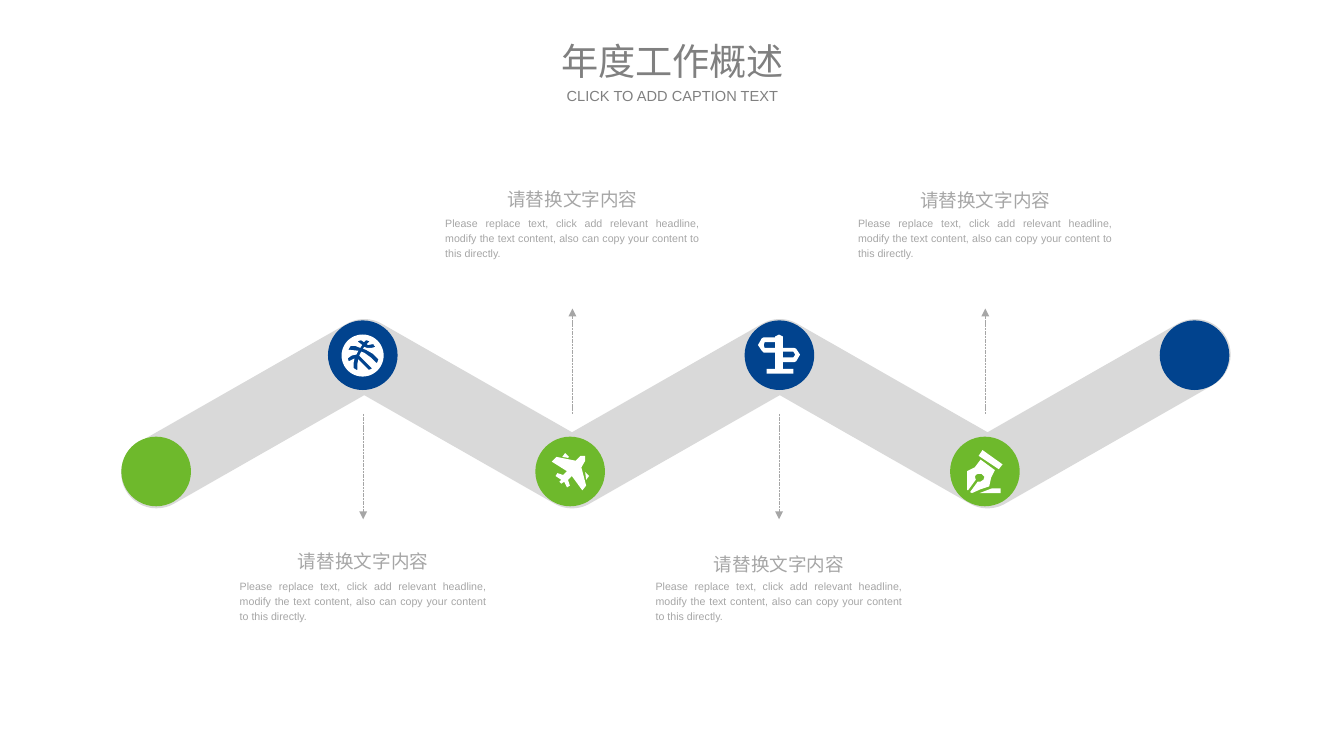
import math
from dataclasses import dataclass

from pptx import Presentation, util as u
from pptx.dml.color import RGBColor
from pptx.enum import dml, shapes, text
from pptx.oxml import ns
from lxml import etree

Point = tuple[float, float]
Contour = list[Point]


@dataclass(frozen=True)
class Theme:
    font: str = "Arial"
    title: str = "808080"
    caption: str = "A6A6A6"
    band: str = "D9D9D9"
    green: str = "6EB92C"
    blue: str = "01438E"
    icon: str = "FFFFFF"
    title_size: float = 28
    subtitle_size: float = 11
    heading_size: float = 14
    body_size: float = 8


@dataclass(frozen=True)
class Icon:
    left: float
    top: float
    contours: list[Contour]


@dataclass(frozen=True)
class Stop:
    x: float
    high: bool
    icon: Icon | None = None


@dataclass(frozen=True)
class Callout:
    x: float
    heading_top: float
    above: bool


THEME = Theme()
HIGH_Y, LOW_Y = 9.44, 12.53
DISC = 1.85
BAND_X, BAND_PITCH, BAND_RADIUS = 4.16, 5.52, 0.94
BAND_HIGH, BAND_LOW = 9.42, 12.57
ARROW_Y, ARROW_LENGTH = 11, 2.8
ICON_UNIT = u.Cm(2.54) / 100
HEADING = "请替换文字内容"
BODY = ("Please replace text, click add relevant headline, modify the text content, "
        "also can copy your content to this directly.")


def arc(center: Point, radius: float, start: float, sweep: float, steps: int) -> Contour:
    return [(center[0] + radius * math.cos(start + sweep * i / steps),
             center[1] + radius * math.sin(start + sweep * i / steps))
            for i in range(steps + 1)]


BALL = Icon(9.09, 8.89, [
    arc((21.5, 22), 22, 0, math.tau, 48),
    [(9, 12), (7, 15), (7, 16), (17, 17), (16, 19), (15, 21), (10, 22), (6, 25), (7, 28),
     (13, 25), (12, 30), (12, 35), (15, 37), (16, 37), (16, 31), (17, 26), (22, 31), (28, 37),
     (31, 36), (31, 35), (25, 29), (18, 22), (19, 20), (20, 18), (23, 19), (30, 24), (36, 30),
     (37, 29), (38, 26), (32, 20), (25, 16), (22, 15), (23, 13), (26, 14), (31, 14), (35, 13),
     (33, 11), (33, 10), (27, 11), (26, 10), (29, 7), (25, 6), (23, 8), (20, 6), (16, 7),
     (21, 11), (19, 14), (14, 12)]])
SIGNPOST = Icon(20.14, 8.89, [
    [(26, 14), (38, 14), (40, 15), (44, 21), (40, 28), (38, 29), (26, 29), (26, 36), (37, 36),
     (37, 41), (9, 41), (9, 36), (18, 36), (18, 19), (6, 19), (4, 17), (0, 11), (4, 4), (6, 3),
     (18, 3), (18, 2), (22, 0), (26, 2)],
    [(18, 8), (7, 8), (6, 11), (7, 14), (18, 14)],
    [(37, 18), (26, 18), (26, 24), (37, 24), (39, 21)]])
PLANE = Icon(14.66, 12.04, [
    [(35, 3), (35, 8), (31, 15), (36, 34), (32, 39), (21, 24), (17, 28), (19, 34), (16, 36),
     (13, 30), (10, 32), (8, 30), (10, 28), (4, 24), (6, 21), (12, 23), (16, 19), (0, 9),
     (5, 4), (25, 8), (30, 3)],
    [(39, 24), (35, 20), (36, 28)],
    [(14, 0), (11, 4), (17, 5), (18, 4)]])
PEN = Icon(25.7, 11.96, [
    [(0, 42), (0, 22), (8, 18), (14, 10), (29, 21), (25, 29), (23, 38), (14, 41), (5, 45),
     (3, 44), (11, 33), (14, 33), (17, 31), (18, 28), (15, 25), (11, 25), (9, 26), (8, 28),
     (9, 31), (1, 42)],
    [(13, 45), (35, 45), (35, 40), (26, 40)],
    [(33, 20), (37, 15), (16, 0), (12, 6)]])

STOPS = [Stop(4.15, False), Stop(9.64, True, BALL), Stop(15.15, False, PLANE),
         Stop(20.71, True, SIGNPOST), Stop(26.17, False, PEN), Stop(31.74, True)]
CALLOUTS = [Callout(9.65, 14.38, False), Callout(20.7, 14.45, False),
            Callout(15.21, 4.75, True), Callout(26.18, 4.78, True)]


def band_outline(nodes: Contour, radius: float) -> Contour:
    """Walk round the zigzag, rounding outer corners and mitring inner ones."""
    route = nodes + nodes[-2:0:-1]
    outline: Contour = []
    for i, node in enumerate(route):
        before, after = route[i - 1], route[(i + 1) % len(route)]
        heading = math.atan2(node[1] - before[1], node[0] - before[0])
        leaving = math.atan2(after[1] - node[1], after[0] - node[0])
        turn = (leaving - heading) % math.tau
        normal = heading - math.pi / 2
        if turn < math.pi + 0.01:
            outline += arc(node, radius, normal, turn, 24)
        else:
            half = (turn - math.tau) / 2
            outline += arc(node, radius / math.cos(half), normal + half, 0, 1)[:1]
    return outline


def paint(shape, color: str) -> None:
    shape.shadow.inherit = False
    shape.fill.solid()
    shape.fill.fore_color.rgb = RGBColor.from_string(color)
    shape.line.fill.background()


def draw_outline(slide, contours: list[Contour], unit: float, color: str,
                 left: float = 0, top: float = 0) -> None:
    scaled = [[(x * unit, y * unit) for x, y in contour] for contour in contours]
    builder = slide.shapes.build_freeform(*scaled[0][0])
    builder.add_line_segments(scaled[0][1:])
    for contour in scaled[1:]:
        builder.move_to(*contour[0])
        builder.add_line_segments(contour[1:])
    paint(builder.convert_to_shape(u.Cm(left), u.Cm(top)), color)


def draw_stop(slide, stop: Stop) -> None:
    y = HIGH_Y if stop.high else LOW_Y
    disc = slide.shapes.add_shape(shapes.MSO_SHAPE.OVAL, u.Cm(stop.x - DISC / 2),
                                  u.Cm(y - DISC / 2), u.Cm(DISC), u.Cm(DISC))
    paint(disc, THEME.blue if stop.high else THEME.green)
    if stop.icon:
        draw_outline(slide, stop.icon.contours, ICON_UNIT, THEME.icon,
                     stop.icon.left, stop.icon.top)


def write(shape, content: str, size: float, color: str, frame: dict, paragraph: dict) -> None:
    text_frame = shape.text_frame
    text_frame.text = content
    first = text_frame.paragraphs[0]
    font = first.runs[0].font
    formats = [(text_frame, frame), (first, paragraph),
               (font, {"name": THEME.font, "size": u.Pt(size)})]
    for target, values in formats:
        for name, value in values.items():
            setattr(target, name, value)
    font.color.rgb = RGBColor.from_string(color)


def add_text_box(slide, center: float, top: float, width: float, height: float):
    return slide.shapes.add_textbox(u.Cm(center - width / 2), u.Cm(top),
                                    u.Cm(width), u.Cm(height))


def draw_arrow(slide, x: float, end_y: float) -> None:
    arrow = slide.shapes.add_connector(shapes.MSO_CONNECTOR.STRAIGHT, u.Cm(x), u.Cm(ARROW_Y),
                                       u.Cm(x), u.Cm(end_y))
    arrow.line.color.rgb = RGBColor.from_string(THEME.caption)
    arrow.line.width = u.Pt(0.5)
    arrow.line.dash_style = dml.MSO_LINE.SQUARE_DOT
    properties = arrow.element.spPr
    etree.SubElement(properties.find(ns.qn("a:ln")), ns.qn("a:tailEnd"), type="triangle")
    etree.SubElement(properties, ns.qn("a:effectLst"))


def draw_callout(slide, callout: Callout) -> None:
    draw_arrow(slide, callout.x, ARROW_Y + (-ARROW_LENGTH if callout.above else ARROW_LENGTH))
    heading = add_text_box(slide, callout.x, callout.heading_top, 4.01, 0.91)
    write(heading, HEADING, THEME.heading_size, THEME.caption, {"word_wrap": False},
          {"alignment": text.PP_ALIGN.CENTER, "line_spacing": 1.2})
    body_top, width = (5.56, 7.26) if callout.above else (15.21, 7.06)
    body = add_text_box(slide, callout.x, body_top, width, 1.45)
    write(body, BODY, THEME.body_size, THEME.caption, {"word_wrap": True},
          {"alignment": text.PP_ALIGN.JUSTIFY, "line_spacing": 1.2})


def draw_titles(slide) -> None:
    frame = {"word_wrap": True, "auto_size": text.MSO_AUTO_SIZE.NONE,
             "vertical_anchor": text.MSO_ANCHOR.MIDDLE, "margin_left": 0, "margin_right": 0,
             "margin_top": 0, "margin_bottom": 0}
    centred = {"alignment": text.PP_ALIGN.CENTER}
    title = slide.shapes.title
    place = {"left": 14.66, "top": 0.99, "width": 6.43, "height": 1.24}
    for name, value in place.items():
        setattr(title, name, u.Cm(value))
    write(title, "年度工作概述", THEME.title_size, THEME.title, frame, centred)
    subtitle = add_text_box(slide, 17.87, 2.29, 6.43, 0.48)
    write(subtitle, "CLICK TO ADD CAPTION TEXT", THEME.subtitle_size, THEME.title, frame, centred)


def main() -> None:
    presentation = Presentation()
    presentation.slide_width, presentation.slide_height = u.Cm(35.71), u.Cm(20.09)
    slide = presentation.slides.add_slide(presentation.slide_layouts[5])
    draw_titles(slide)
    nodes = [(BAND_X + i * BAND_PITCH, BAND_HIGH if stop.high else BAND_LOW)
             for i, stop in enumerate(STOPS)]
    draw_outline(slide, [band_outline(nodes, BAND_RADIUS)], u.Cm(1), THEME.band)
    for stop in STOPS:
        draw_stop(slide, stop)
    for callout in CALLOUTS:
        draw_callout(slide, callout)
    presentation.save("out.pptx")


if __name__ == "__main__":
    main()
